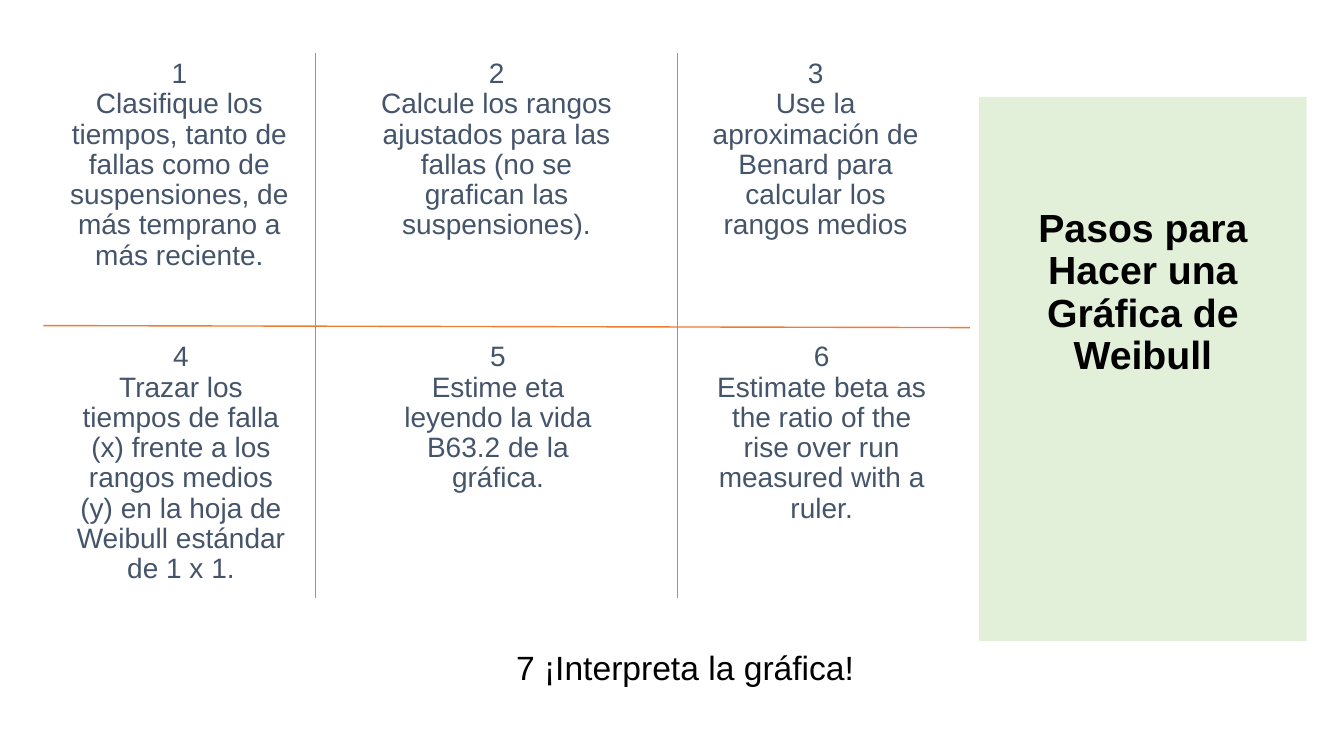
from lxml import etree
from pptx import Presentation
from pptx.dml.color import RGBColor
from pptx.enum.shapes import MSO_CONNECTOR
from pptx.enum.text import MSO_ANCHOR, MSO_AUTO_SIZE, PP_ALIGN
from pptx.oxml.ns import qn
from pptx.util import Pt

PX = 9144
STRAIGHT = MSO_CONNECTOR.STRAIGHT
TOP = MSO_ANCHOR.TOP
NO_FIT = MSO_AUTO_SIZE.NONE
LEFT, CENTER = PP_ALIGN.LEFT, PP_ALIGN.CENTER
TITLE_ONLY = 5

COLORS = {"panel": "E2F0D9", "rule": "ED7D31", "step": "44546A", "black": "000000"}

STEPS = [
    ((43, 54, 270, 260), "1\nClasifique los tiempos, tanto de fallas como de suspensiones, de más temprano a más reciente."),
    ((360, 54, 265, 232), "2\nCalcule los rangos ajustados para las fallas (no se grafican las suspensiones)."),
    ((684, 54, 250, 192), "3\nUse la aproximación de Benard para calcular los rangos medios"),
    ((59, 335, 241, 261), "4\nTrazar los tiempos de falla (x) frente a los rangos medios (y) en la hoja de Weibull estándar de 1 x 1."),
    ((376, 335, 236, 190), "5\nEstime eta leyendo la vida B63.2 de la gráfica."),
    ((697, 335, 236, 224), "6\nEstimate beta as the ratio of the rise over run measured with a ruler."),
]
RULES = [(962, 325, 43, 323), (313, 53, 313, 593), (672, 53, 672, 593)]


class StepsSlide:
    """Draws the Weibull steps slide with one shared style."""

    def __init__(self, deck):
        self.page = deck.slides.add_slide(deck.slide_layouts[TITLE_ONLY])

    def color(self, name):
        return RGBColor.from_string(COLORS[name])

    def fill_text(self, box, text, size, color, align=CENTER, bold=False, inset=5):
        frame = box.text_frame
        frame_format = {"word_wrap": True, "auto_size": NO_FIT, "vertical_anchor": TOP,
                        "margin_left": 10 * PX, "margin_right": 10 * PX,
                        "margin_top": inset * PX, "margin_bottom": 5 * PX}
        for name, value in frame_format.items():
            setattr(frame, name, value)
        para = frame.paragraphs[0]
        para.text = text
        para_format = {"alignment": align, "line_spacing": 0.9, "space_before": Pt(0)}
        for name, value in para_format.items():
            setattr(para, name, value)
        for span in para.runs:
            for name, value in {"name": "Arial", "size": Pt(size), "bold": bold}.items():
                setattr(span.font, name, value)
            span.font.color.rgb = self.color(color)

    def title(self, area, text):
        box = self.page.shapes.title
        for name, value in zip(("left", "top", "width", "height"), area):
            setattr(box, name, value * PX)
        box.fill.solid()
        box.fill.fore_color.rgb = self.color("panel")
        self.fill_text(box, text, 28, "black", bold=True, inset=111)

    def text(self, area, text, size, color, align=CENTER):
        box = self.page.shapes.add_textbox(*(value * PX for value in area))
        self.fill_text(box, text, size, color, align)

    def rule(self, ends):
        line = self.page.shapes.add_connector(STRAIGHT, *(value * PX for value in ends))
        line.line.color.rgb = self.color("rule")
        line.line.width = Pt(1)
        etree.SubElement(line._element.spPr, qn("a:effectLst"))


def main():
    deck = Presentation()
    deck.slide_width, deck.slide_height = 1333 * PX, 750 * PX
    slide = StepsSlide(deck)
    slide.title((971, 96, 325, 540), "Pasos para Hacer una Gráfica de Weibull")
    for ends in RULES:
        slide.rule(ends)
    for area, text in STEPS:
        slide.text(area, text, 20, "step")
    slide.text((502, 641, 534, 109), "7 ¡Interpreta la gráfica!", 24, "black", LEFT)
    deck.save("out.pptx")


if __name__ == "__main__":
    main()
